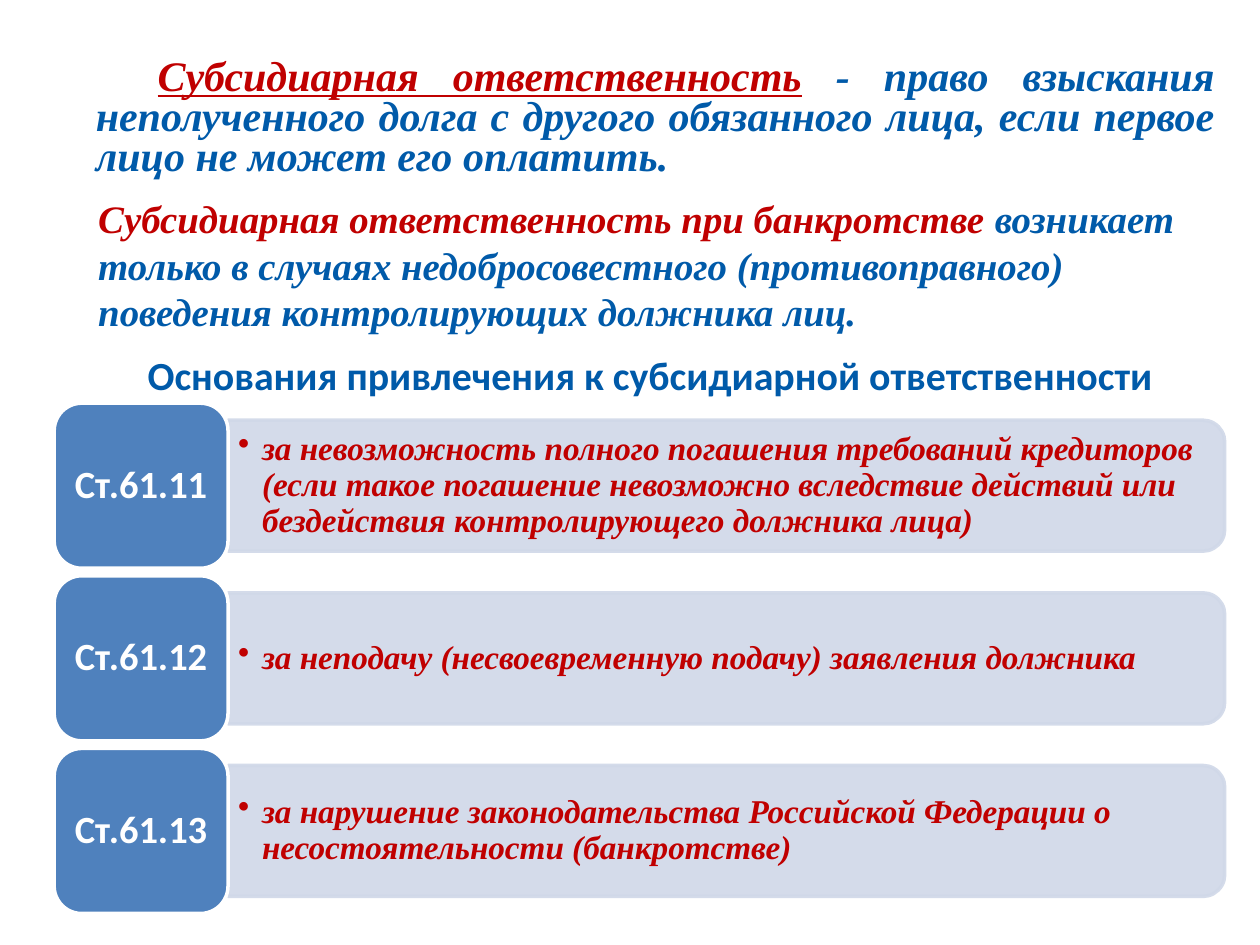
from typing import NamedTuple

from lxml.etree import SubElement
from pptx import Presentation
from pptx.dml.color import RGBColor
from pptx.enum.shapes import MSO_SHAPE
from pptx.enum.text import MSO_ANCHOR, MSO_AUTO_SIZE, PP_ALIGN
from pptx.oxml.ns import qn
from pptx.util import Inches, Pt

COLORS = {
    "red": "C00000",
    "blue": "005AA9",
    "panel": "D0D8E8",
    "label": "4F81BD",
    "white": "FFFFFF",
}
SERIF, SANS = "Times New Roman", "Calibri"
TEXT_LEFT, TEXT_WIDTH = 0.67, 9.06
FIRST_ROW_TOP, ROW_PITCH = 3.2, 1.37
LABEL_LEFT, LABEL_WIDTH, LABEL_HEIGHT = 0.43, 1.38, 1.31
PANEL_LENGTH, PANEL_HEIGHT = 7.91, 1.04
GROUND_HEIGHT = 0.94


class Run(NamedTuple):
    text: str
    color: str
    underline: bool = False


class Ground(NamedTuple):
    article: str
    reason: str


GROUNDS = [
    Ground("Ст.61.11", "за невозможность полного погашения требований кредиторов "
           "(если такое погашение невозможно вследствие действий или "
           "бездействия контролирующего должника лица)"),
    Ground("Ст.61.12", "за неподачу (несвоевременную подачу) заявления должника"),
    Ground("Ст.61.13", "за нарушение законодательства Российской Федерации о "
           "несостоятельности (банкротстве)"),
]


def rgb(name: str) -> RGBColor:
    return RGBColor.from_string(COLORS[name])


def write_text(shape, *runs: Run, size: float, font: str = SERIF,
               italic: bool = False, align=PP_ALIGN.LEFT, spacing=1.0,
               after: float = 0, first_indent: float = 0, margin_left: float = 0,
               bullet: bool = False, insets: tuple = (0.11, 0.06),
               wrap: bool = True) -> None:
    frame = shape.text_frame
    frame.auto_size = MSO_AUTO_SIZE.NONE
    frame.word_wrap = wrap
    frame.vertical_anchor = MSO_ANCHOR.MIDDLE
    frame.margin_left = frame.margin_right = Inches(insets[0])
    frame.margin_top = frame.margin_bottom = Inches(insets[1])
    paragraph = frame.paragraphs[0]
    paragraph.alignment = align
    paragraph.line_spacing = spacing
    paragraph.space_before = Pt(0)
    paragraph.space_after = Pt(after)
    properties = paragraph._p.get_or_add_pPr()
    properties.set("marL", str(Inches(margin_left)))
    properties.set("indent", str(Inches(first_indent)))
    if bullet:
        SubElement(properties, qn("a:buChar"), char="•")
    for part in runs:
        run = paragraph.add_run()
        run.text = part.text
        run.font.name = font
        run.font.size = Pt(size)
        run.font.bold = True
        run.font.italic = italic
        run.font.underline = part.underline
        run.font.color.rgb = rgb(part.color)


def add_box(slide, left: float, top: float, width: float, height: float):
    return slide.shapes.add_textbox(Inches(left), Inches(top),
                                    Inches(width), Inches(height))


def add_block(slide, kind, left: float, top: float, width: float, height: float,
              fill: str, line: str):
    block = slide.shapes.add_shape(kind, Inches(left), Inches(top),
                                   Inches(width), Inches(height))
    block.shadow.inherit = False
    block.fill.solid()
    block.fill.fore_color.rgb = rgb(fill)
    block.line.color.rgb = rgb(line)
    block.line.width = Pt(2)
    return block


def add_ground(slide, ground: Ground, top: float) -> None:
    """Draw one row: a translucent panel with the reason, and the article label."""
    middle = top + LABEL_HEIGHT / 2
    panel_left = LABEL_LEFT + LABEL_WIDTH
    panel = add_block(slide, MSO_SHAPE.ROUND_2_SAME_RECTANGLE,
                      panel_left + (PANEL_LENGTH - PANEL_HEIGHT) / 2,
                      middle - PANEL_LENGTH / 2,
                      PANEL_HEIGHT, PANEL_LENGTH, "panel", "panel")
    panel.rotation = 90
    for color in panel._element.spPr.iter(qn("a:srgbClr")):
        SubElement(color, qn("a:alpha"), val="90000")

    reason = add_box(slide, panel_left, middle - GROUND_HEIGHT / 2,
                     7.86, GROUND_HEIGHT)
    write_text(reason, Run(ground.reason, "red"), size=19, italic=True,
               spacing=0.9, margin_left=0.19, first_indent=-0.19, bullet=True,
               insets=(0.08, 0.04))

    label = add_block(slide, MSO_SHAPE.ROUNDED_RECTANGLE, LABEL_LEFT, top,
                      LABEL_WIDTH, LABEL_HEIGHT, "label", "white")
    write_text(label, Run(ground.article, "white"), size=22, font=SANS,
               align=PP_ALIGN.CENTER, spacing=0.9, insets=(0.09, 0.05), wrap=False)


def main() -> None:
    presentation = Presentation()
    presentation.slide_width, presentation.slide_height = Inches(10), Inches(7.5)
    slide = presentation.slides.add_slide(presentation.slide_layouts[5])

    title = slide.shapes.title
    title.left, title.top = Inches(TEXT_LEFT), Inches(0.36)
    title.width, title.height = Inches(TEXT_WIDTH), Inches(1.18)
    write_text(title, Run("Субсидиарная ответственность", "red", underline=True),
               Run(" - право взыскания неполученного долга с другого обязанного "
                   "лица, если первое лицо не может его оплатить.", "blue"),
               size=24, italic=True, align=PP_ALIGN.JUSTIFY, spacing=Pt(23),
               after=10, first_indent=0.49, insets=(0.09, 0.05))

    bankruptcy = add_box(slide, TEXT_LEFT, 1.55, TEXT_WIDTH, 1.1)
    write_text(bankruptcy,
               Run("Субсидиарная ответственность при банкротстве ", "red"),
               Run("возникает только в случаях недобросовестного "
                   "(противоправного) поведения контролирующих должника лиц.",
                   "blue"),
               size=22.2, italic=True)

    heading = add_box(slide, TEXT_LEFT, 2.65, TEXT_WIDTH, 0.71)
    write_text(heading,
               Run("Основания привлечения к субсидиарной ответственности ", "blue"),
               size=22.8, font=SANS, align=PP_ALIGN.CENTER, spacing=0.8)

    for row, ground in enumerate(GROUNDS):
        add_ground(slide, ground, FIRST_ROW_TOP + row * ROW_PITCH)

    presentation.save("out.pptx")


if __name__ == "__main__":
    main()
